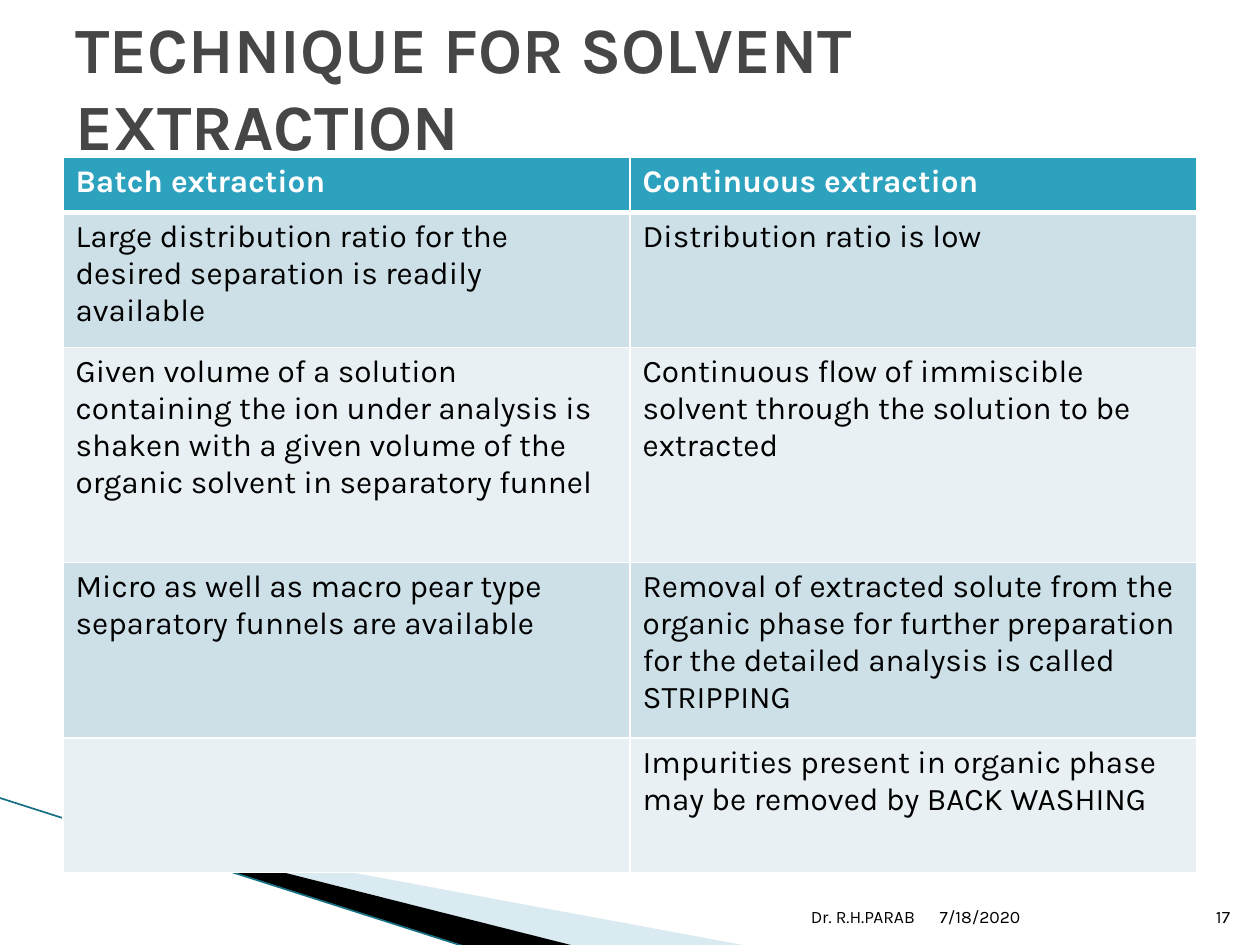
from typing import NamedTuple, Optional

from pptx import Presentation
from pptx.dml.color import RGBColor
from pptx.enum.shapes import MSO_CONNECTOR as Connector
from pptx.enum.text import MSO_ANCHOR as Anchor, MSO_AUTO_SIZE as AutoSize, PP_ALIGN as Align
from pptx.oxml.ns import qn
from pptx.util import Pt
from lxml.etree import SubElement

FONT = "Karla"
WHITE = RGBColor(0xFF, 0xFF, 0xFF)
BLACK = RGBColor(0, 0, 0)
GREY = RGBColor(0x46, 0x46, 0x46)
TEAL = RGBColor(0x2D, 0xA2, 0xBF)
BANDS = (RGBColor(0xCD, 0xE0, 0xE8), RGBColor(0xE8, 0xF0, 0xF4))
PALE_BLUE = RGBColor(0xA0, 0xCB, 0xDC)
DARK_TEAL = RGBColor(0x16, 0x70, 0x84)

TITLE = "TECHNIQUE FOR SOLVENT EXTRACTION"
COLUMN_WIDTH = 324


class Row(NamedTuple):
    height: float
    batch: str
    continuous: str


class Wedge(NamedTuple):
    frame: tuple  # left, top, width, height; the outline may reach past it
    points: tuple
    color: RGBColor
    opacity: Optional[int] = None


class FooterItem(NamedTuple):
    text: str
    left: float
    width: float
    align: Align


ROWS = (
    Row(31.5, "Batch extraction", "Continuous extraction"),
    Row(77, "Large distribution ratio for the desired separation is readily available",
        "Distribution ratio is low"),
    Row(123, "Given volume of a solution containing the ion under analysis is shaken with "
             "a given volume of the organic solvent in separatory funnel",
        "Continuous flow of immiscible solvent through the solution to be extracted"),
    Row(100.2, "Micro as well as macro pear type separatory funnels are available",
        "Removal of extracted solute from the organic phase for further preparation "
        "for the detailed analysis is called STRIPPING"),
    Row(77, "", "Impurities present in organic phase may be removed by BACK WASHING"),
)
WEDGES = (
    Wedge((56.2, 393.8, 299.5, 113.8),
          ((39.6, 468.7), (428.4, 540.7), (328.3, 540.7), (39.6, 468)), PALE_BLUE, 40),
    Wedge((-4.3, 455.8, 299.5, 66.2),
          ((38.2, 467.3), (329, 540.7), (267.8, 541.4), (38.9, 468)), BLACK),
)
FOOTER = (
    FooterItem("7/18/2020", 529.9, 151.2, Align.LEFT),
    FooterItem("Dr. R.H.PARAB", 344.9, 185, Align.RIGHT),
    FooterItem("17", 681.1, 28.8, Align.RIGHT),
)


def write_text(text_frame, text: str, *, size: float, color: RGBColor = BLACK,
               bold: bool = False, align: Align = Align.LEFT) -> None:
    paragraph = text_frame.paragraphs[0]
    paragraph.alignment = align
    font = paragraph.font
    if text:
        run = paragraph.add_run()
        run.text = text
        font = run.font
    font.name, font.size, font.bold = FONT, Pt(size), bold
    font.color.rgb = color


def set_frame(shape, frame: tuple) -> None:
    """Give a freeform its own frame while its outline stays in place."""
    left, top, width, height = (Pt(value) for value in frame)
    shift_x, shift_y = shape.left - left, shape.top - top
    outline = shape._element.spPr.find(".//" + qn("a:path"))
    outline.set("w", str(width))
    outline.set("h", str(height))
    for point in outline.iter(qn("a:pt")):
        point.set("x", str(int(point.get("x")) + shift_x))
        point.set("y", str(int(point.get("y")) + shift_y))
    shape.left, shape.top, shape.width, shape.height = left, top, width, height


def draw_wedge(slide, wedge: Wedge) -> None:
    start, *others = [(Pt(x), Pt(y)) for x, y in wedge.points]
    builder = slide.shapes.build_freeform(*start)
    builder.add_line_segments(others)
    shape = builder.convert_to_shape()
    set_frame(shape, wedge.frame)
    shape.shadow.inherit = False
    shape.line.fill.background()
    shape.fill.solid()
    shape.fill.fore_color.rgb = wedge.color
    if wedge.opacity is not None:
        color = shape.fill._xPr.find(".//" + qn("a:srgbClr"))
        SubElement(color, qn("a:alpha"), val=str(wedge.opacity * 1000))


def draw_line(slide) -> None:
    line = slide.shapes.add_connector(
        Connector.STRAIGHT, Pt(-0.7), Pt(455.8), Pt(267.1), Pt(541.4))
    line.line.color.rgb = DARK_TEAL
    line.line.width = Pt(0.95)
    SubElement(line._element.spPr, qn("a:effectLst"))


def set_borders(cell, top: float, bottom: float) -> None:
    properties = cell._tc.get_or_add_tcPr()
    widths = {"a:lnL": 1, "a:lnR": 1, "a:lnT": top, "a:lnB": bottom}
    for index, (tag, width) in enumerate(widths.items()):
        border = SubElement(properties, qn(tag), w=str(Pt(width)))
        fill = SubElement(border, qn("a:solidFill"))
        SubElement(fill, qn("a:srgbClr"), val=str(WHITE))
        properties.insert(index, border)  # borders come before the fill


def draw_table(slide) -> None:
    table = slide.shapes.add_table(
        len(ROWS), 2, Pt(36), Pt(90), Pt(2 * COLUMN_WIDTH),
        Pt(sum(row.height for row in ROWS))).table
    for column in table.columns:
        column.width = Pt(COLUMN_WIDTH)
    for index, row in enumerate(ROWS):
        header = index == 0
        table.rows[index].height = Pt(row.height)
        for column, text in enumerate((row.batch, row.continuous)):
            cell = table.cell(index, column)
            cell.fill.solid()
            cell.fill.fore_color.rgb = TEAL if header else BANDS[(index - 1) % 2]
            set_borders(cell, top=3 if index == 1 else 1, bottom=3 if header else 1)
            write_text(cell.text_frame, text, size=18, bold=header,
                       color=WHITE if header else BLACK)


def draw_footer_item(slide, item: FooterItem) -> None:
    box = slide.shapes.add_textbox(Pt(item.left), Pt(504.7), Pt(item.width), Pt(28.8))
    box.text_frame.word_wrap = True
    box.text_frame.vertical_anchor = Anchor.BOTTOM
    write_text(box.text_frame, item.text, size=10, align=item.align)


def draw_title(slide) -> None:
    title = slide.shapes.title
    title.left, title.top, title.width, title.height = Pt(36), Pt(12.2), Pt(648), Pt(74.2)
    title.text_frame.word_wrap = True
    title.text_frame.auto_size = AutoSize.NONE
    title.text_frame.vertical_anchor = Anchor.MIDDLE
    write_text(title.text_frame, TITLE, size=36.9, color=GREY, bold=True)
    slide.shapes._spTree.append(title._element)  # bring to front


def main() -> None:
    presentation = Presentation()
    presentation.slide_width, presentation.slide_height = Pt(720), Pt(540)
    slide = presentation.slides.add_slide(presentation.slide_layouts[5])

    # Corner decoration
    for wedge in WEDGES:
        draw_wedge(slide, wedge)
    draw_line(slide)

    # Content
    draw_table(slide)
    for item in FOOTER:
        draw_footer_item(slide, item)
    draw_title(slide)

    presentation.save("out.pptx")


if __name__ == "__main__":
    main()
